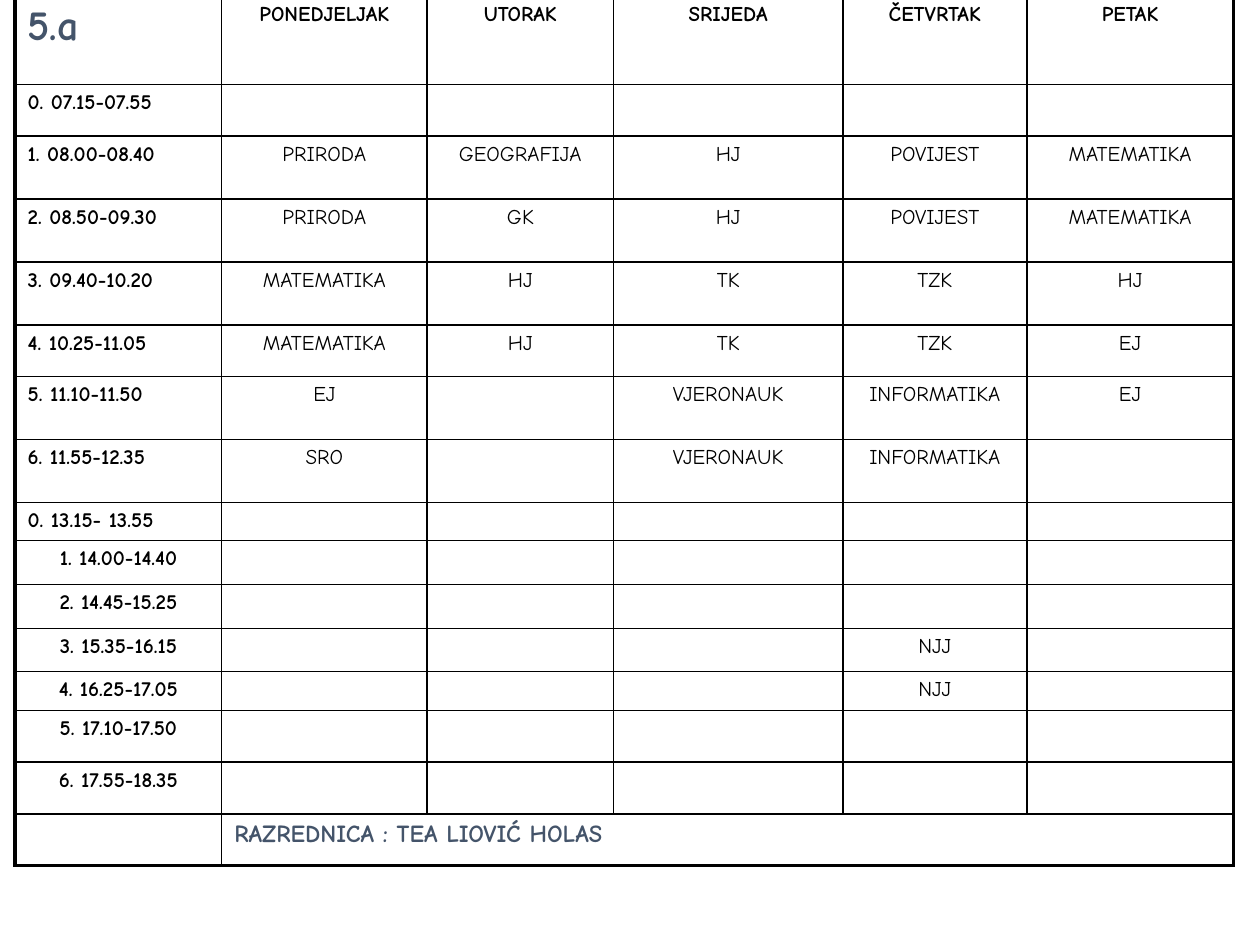
from lxml import etree
from pptx import Presentation
from pptx.dml.color import RGBColor
from pptx.enum.text import PP_ALIGN
from pptx.oxml.ns import qn
from pptx.util import Inches, Pt

LEFT, CENTER = PP_ALIGN.LEFT, PP_ALIGN.CENTER
BLACK = RGBColor(0x00, 0x00, 0x00)
SLATE = RGBColor(0x44, 0x54, 0x6A)
FONT = "Comic Neue"
THIN, THICK = Pt(1), Pt(2.25)

COLS = [1.64, 1.63, 1.48, 1.82, 1.46, 1.64]
ROWS = [0.7, 0.41, 0.5, 0.5, 0.5, 0.41, 0.5, 0.5,
        0.3, 0.35, 0.35, 0.34, 0.31, 0.41, 0.41, 0.41]
FIRST_AFTERNOON, LAST_ROW = 9, len(ROWS) - 1

TIMETABLE = [
    ["5.a", "PONEDJELJAK", "UTORAK", "SRIJEDA", "ČETVRTAK", "PETAK"],
    ["0. 07.15-07.55"],
    ["1. 08.00-08.40", "PRIRODA", "GEOGRAFIJA", "HJ", "POVIJEST", "MATEMATIKA"],
    ["2. 08.50-09.30", "PRIRODA", "GK", "HJ", "POVIJEST", "MATEMATIKA"],
    ["3. 09.40-10.20", "MATEMATIKA", "HJ", "TK", "TZK", "HJ"],
    ["4. 10.25-11.05", "MATEMATIKA", "HJ", "TK", "TZK", "EJ"],
    ["5. 11.10-11.50", "EJ", "", "VJERONAUK", "INFORMATIKA", "EJ"],
    ["6. 11.55-12.35", "SRO", "", "VJERONAUK", "INFORMATIKA"],
    ["0. 13.15- 13.55"],
    ["1. 14.00-14.40"],
    ["2. 14.45-15.25"],
    ["3. 15.35-16.15", "", "", "", "NJJ"],
    ["4. 16.25-17.05", "", "", "", "NJJ"],
    ["5. 17.10-17.50"],
    ["6. 17.55-18.35"],
    ["", "RAZREDNICA : TEA LIOVIĆ HOLAS"],
]


def set_borders(cell, row, col):
    edges = {
        "a:lnL": col == 0,
        "a:lnR": col == len(COLS) - 1,
        "a:lnT": row == 0,
        "a:lnB": row == LAST_ROW,
    }
    tcPr = cell._tc.get_or_add_tcPr()
    for tag, outer in edges.items():
        ln = etree.SubElement(tcPr, qn(tag), w=str(THICK if outer else THIN))
        fill = etree.SubElement(ln, qn("a:solidFill"))
        etree.SubElement(fill, qn("a:srgbClr"), val=str(BLACK))


def text_style(row, col):
    if (row, col) == (0, 0):
        return 24, SLATE, True, LEFT
    if row == LAST_ROW:
        return 14, SLATE, True, LEFT
    bold = row == 0 or col == 0
    align = LEFT if col == 0 and row < FIRST_AFTERNOON else CENTER
    return 12, BLACK, bold, align


def set_text(cell, text, size, color, bold, align):
    p = cell.text_frame.paragraphs[0]
    p.text = text
    p.alignment = align
    for r in p.runs:
        r.font.name = FONT
        r.font.size = Pt(size)
        r.font.bold = bold
        r.font.color.rgb = color
    if not text:
        end = etree.SubElement(p._p, qn("a:endParaRPr"), sz=str(size * 100))
        etree.SubElement(end, qn("a:latin"), typeface=FONT)


def add_timetable(slide):
    frame = slide.shapes.add_table(
        len(ROWS), len(COLS), Inches(0.12), Inches(-0.03),
        Inches(sum(COLS)), Inches(sum(ROWS)))
    table = frame.table
    table.first_row = table.horz_banding = False
    for column, width in zip(table.columns, COLS):
        column.width = Inches(width)
    for row, height in enumerate(ROWS):
        table.rows[row].height = Inches(height)
        texts = TIMETABLE[row] + [""] * (len(COLS) - len(TIMETABLE[row]))
        for col, text in enumerate(texts):
            cell = table.cell(row, col)
            set_borders(cell, row, col)
            cell.fill.background()
            set_text(cell, text, *text_style(row, col))
    teacher = table.cell(LAST_ROW, 1)
    teacher.merge(table.cell(LAST_ROW, len(COLS) - 1))
    teacher._tc.tcPr.find(qn("a:lnR")).set("w", str(THICK))


def main():
    prs = Presentation()
    prs.slide_width, prs.slide_height = Inches(10), Inches(7.5)
    slide = prs.slides.add_slide(prs.slide_layouts[6])
    add_timetable(slide)
    prs.save("out.pptx")


if __name__ == "__main__":
    main()
